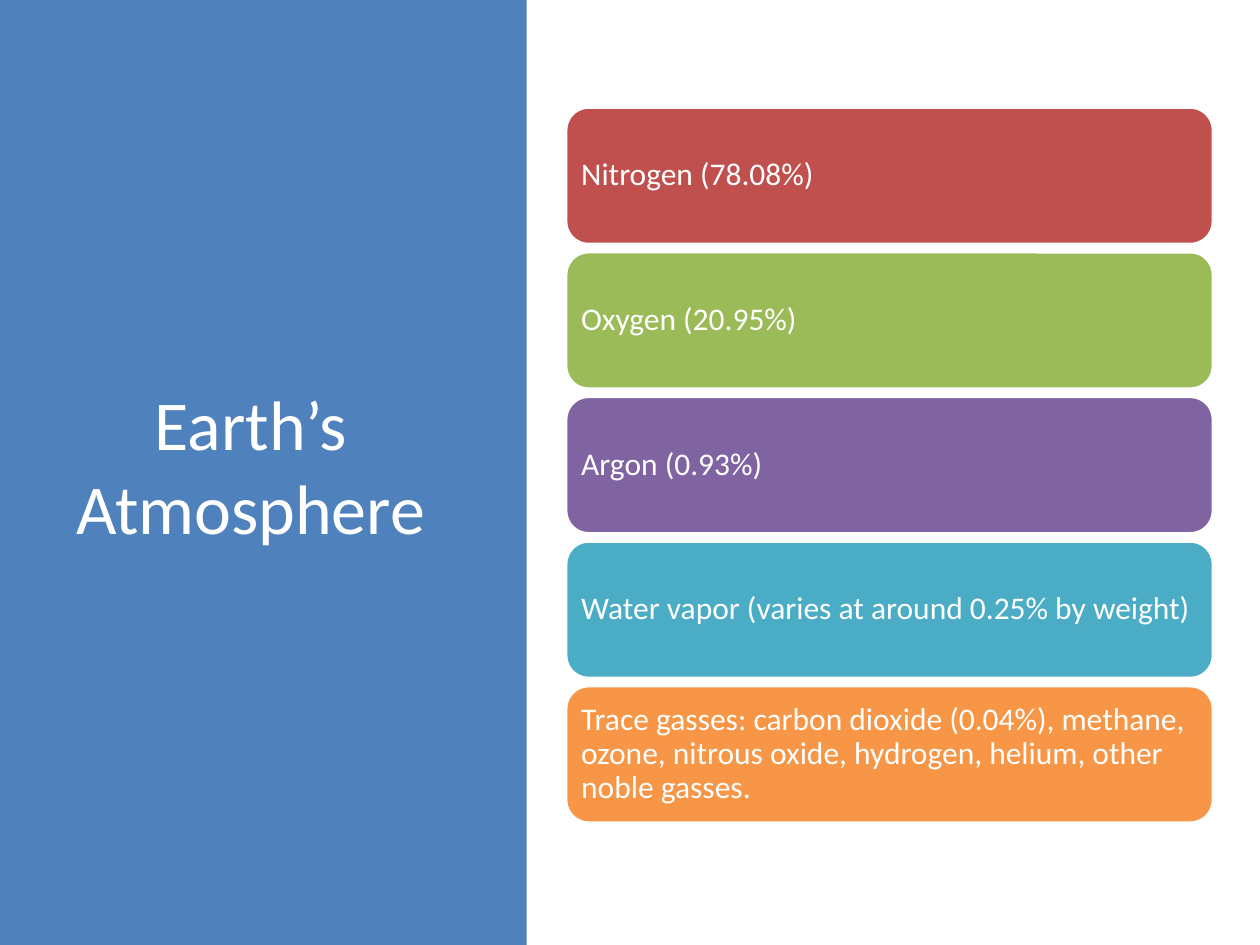
from pptx import Presentation
from pptx.dml.color import RGBColor
from pptx.enum.shapes import MSO_SHAPE
from pptx.enum.text import MSO_ANCHOR, PP_ALIGN
from pptx.util import Inches, Pt

RECT = MSO_SHAPE.RECTANGLE
ROUND = MSO_SHAPE.ROUNDED_RECTANGLE
MIDDLE = MSO_ANCHOR.MIDDLE
LEFT = PP_ALIGN.LEFT
CENTER = PP_ALIGN.CENTER

COLORS = {
    "white": "FFFFFF",
    "blue": "4F81BD",
    "red": "C0504D",
    "green": "9BBB59",
    "purple": "8064A2",
    "teal": "4BACC6",
    "orange": "F79646",
}

GASES = [
    ("Nitrogen (78.08%)", "red"),
    ("Oxygen (20.95%)", "green"),
    ("Argon (0.93%)", "purple"),
    ("Water vapor (varies at around 0.25% by weight)", "teal"),
    ("Trace gasses: carbon dioxide (0.04%), methane, ozone, nitrous oxide, "
     "hydrogen, helium, other noble gasses.", "orange"),
]


def add_box(kind, x, y, w, h, color):
    box = slide.shapes.add_shape(kind, Inches(x), Inches(y), Inches(w), Inches(h))
    box.shadow.inherit = False
    box.fill.solid()
    box.fill.fore_color.rgb = RGBColor.from_string(COLORS[color])
    return box


def add_text(shape, text, size, align):
    frame = shape.text_frame
    frame.word_wrap = True
    frame.vertical_anchor = MIDDLE
    para = frame.paragraphs[0]
    para.alignment = align
    run = para.add_run()
    run.text = text
    run.font.name = "Calibri"
    run.font.size = Pt(size)
    run.font.color.rgb = RGBColor.from_string(COLORS["white"])
    return frame


prs = Presentation()
prs.slide_width = Inches(10)
prs.slide_height = Inches(7.5)
slide = prs.slides.add_slide(prs.slide_layouts[6])

panel = add_box(RECT, 0, 0, 4.18, 7.5, "blue")
panel.line.fill.background()

title = slide.shapes.add_textbox(Inches(0.43), Inches(0.68), Inches(3.12), Inches(6.02))
add_text(title, "Earth’s Atmosphere", 40, CENTER)

top, step = 0.85, 1.148
for row, (text, color) in enumerate(GASES):
    bar = add_box(ROUND, 4.49, top + row * step, 5.14, 1.09, color)
    bar.line.color.rgb = RGBColor.from_string(COLORS["white"])
    bar.line.width = Pt(2)
    frame = add_text(bar, text, 18, LEFT)
    frame.margin_left = frame.margin_right = Inches(0.07)
    frame.margin_top = frame.margin_bottom = Inches(0.07)
    frame.paragraphs[0].line_spacing = 0.9

prs.save("out.pptx")
